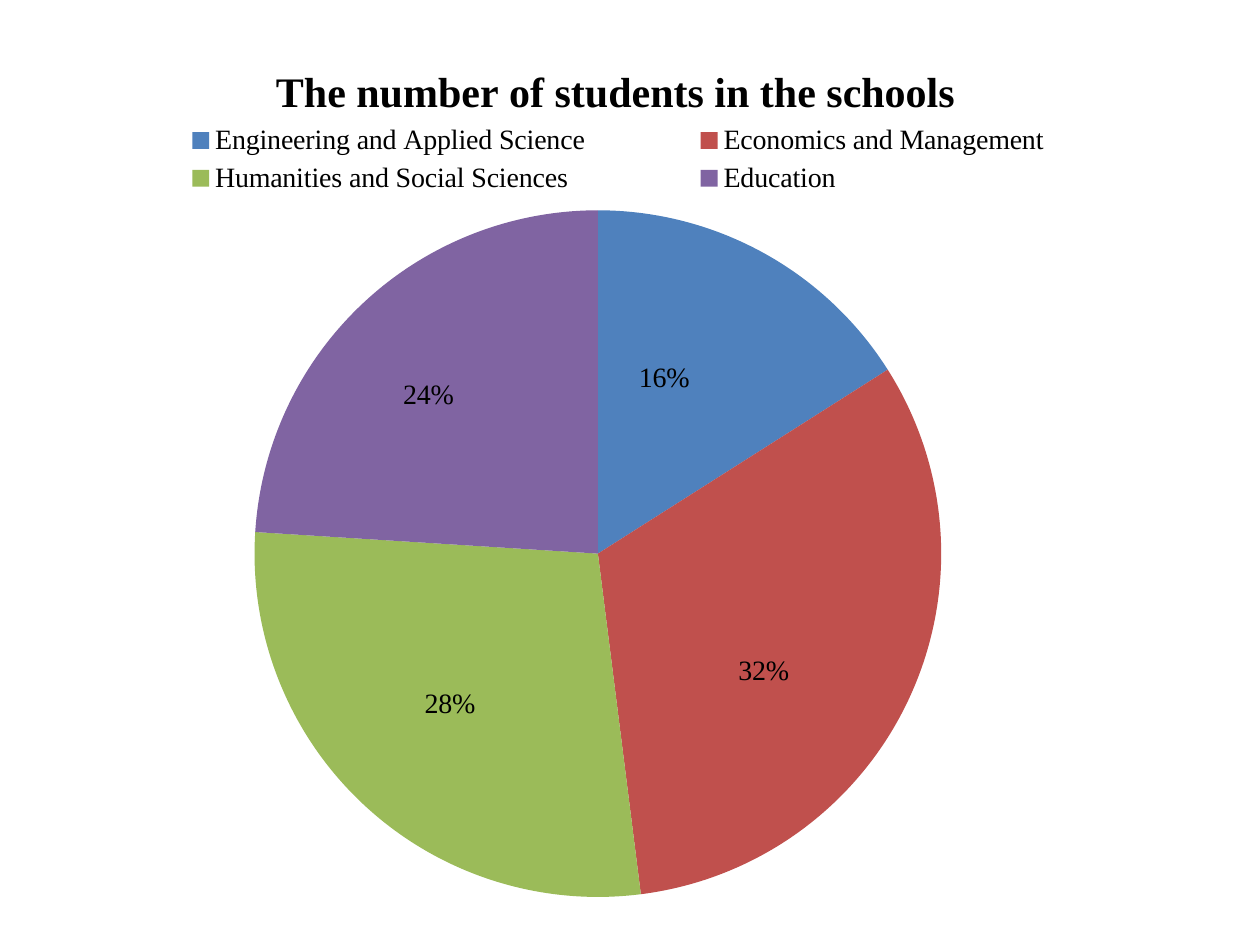
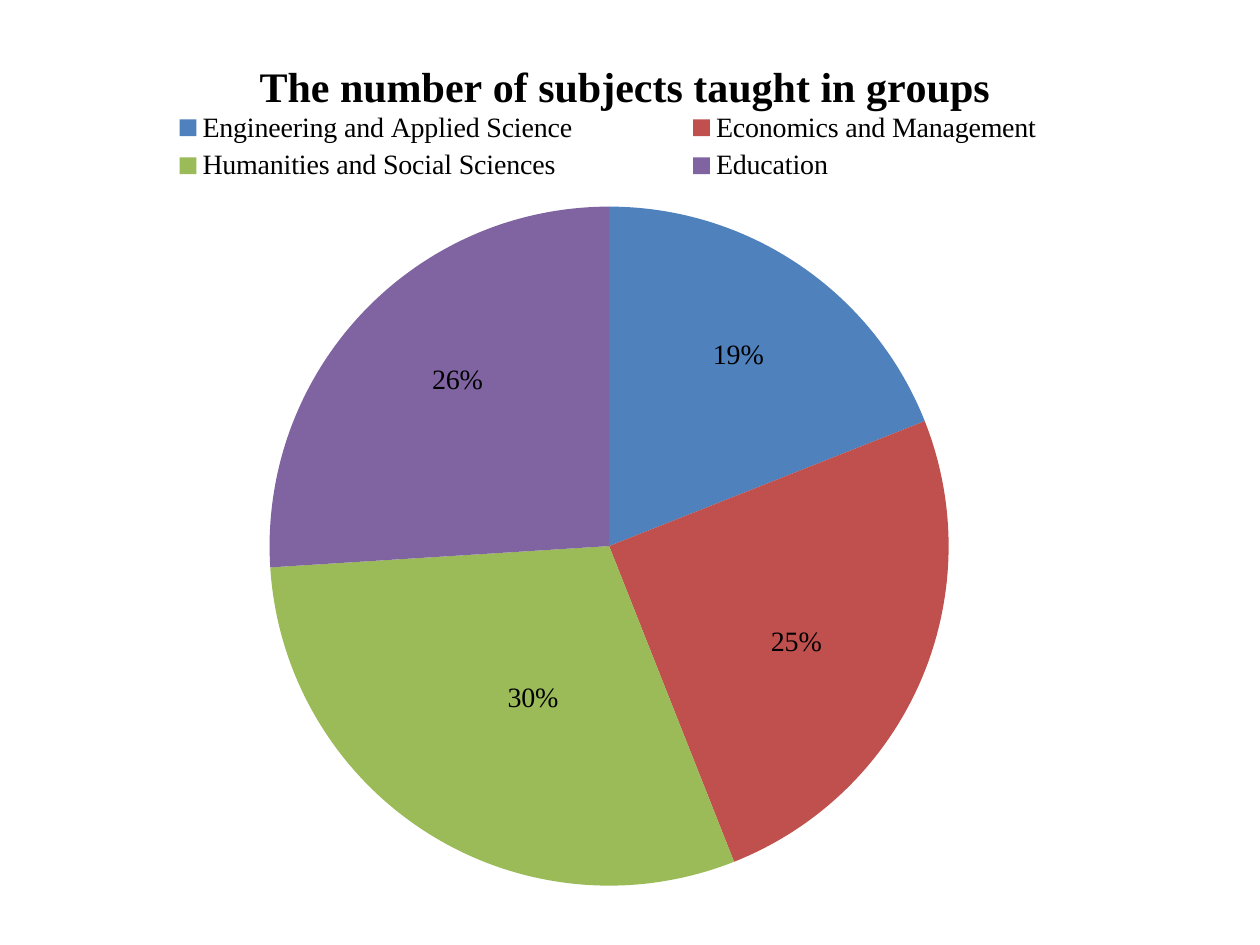
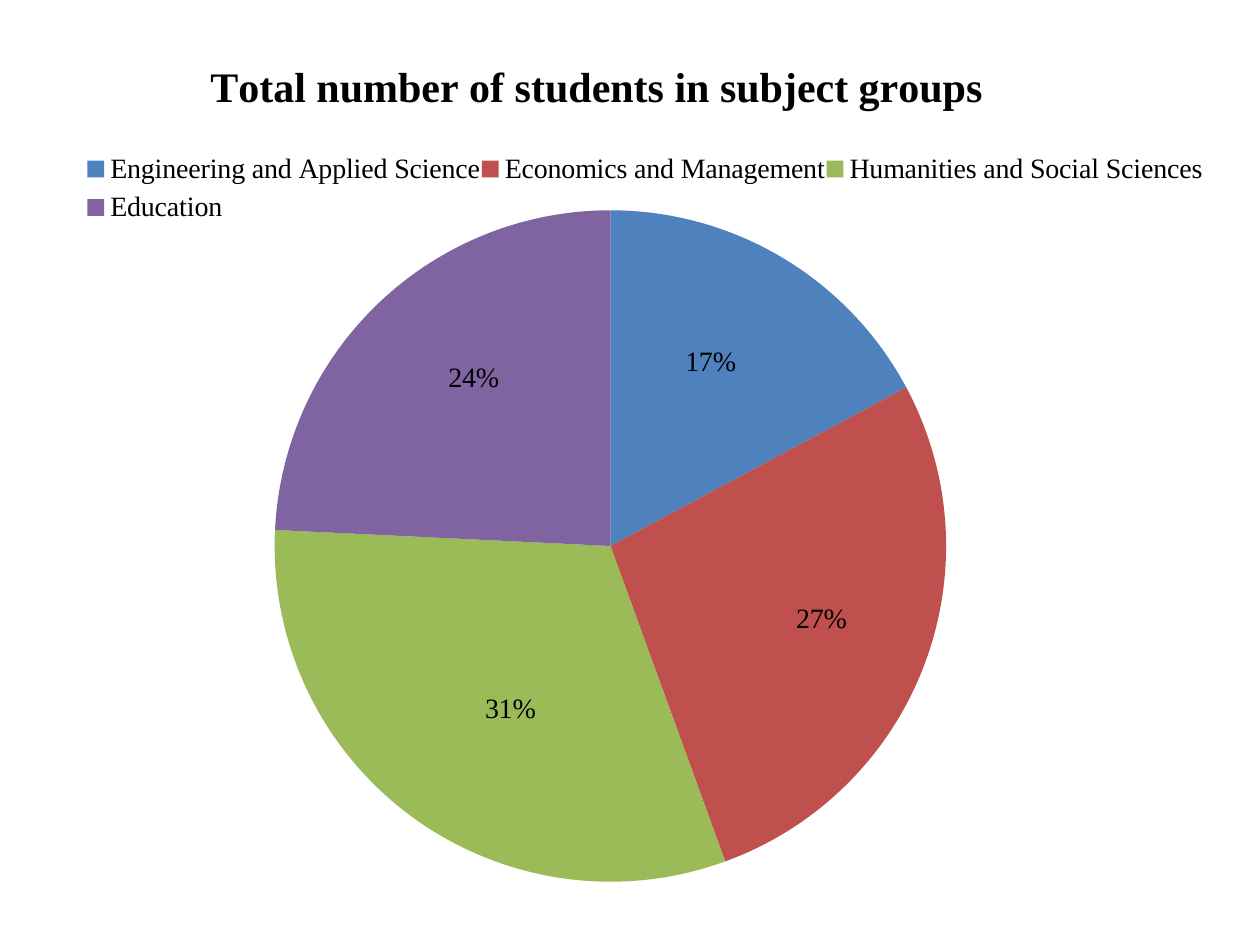
"""Build three slides with pie charts comparing the four schools."""
from math import cos, pi, sin

from pptx import Presentation
from pptx.chart.data import CategoryChartData
from pptx.dml.color import RGBColor
from pptx.enum.chart import XL_CHART_TYPE, XL_LABEL_POSITION, XL_LEGEND_POSITION
from pptx.oxml import parse_xml
from pptx.oxml.ns import nsdecls, qn
from pptx.util import Inches, Pt

BLACK = RGBColor(0x00, 0x00, 0x00)
BLUE = RGBColor(0x4F, 0x81, 0xBD)
RED = RGBColor(0xC0, 0x50, 0x4D)
GREEN = RGBColor(0x9B, 0xBB, 0x59)
PURPLE = RGBColor(0x80, 0x64, 0xA2)
SERIF = "Times New Roman"
BLANK_LAYOUT = 6

SCHOOLS = {
    "Engineering and Applied Science": BLUE,
    "Economics and Management": RED,
    "Humanities and Social Sciences": GREEN,
    "Education": PURPLE,
}

PIES = [
    {
        "title": "The number of students in the schools",
        "series": "Series 1",
        "shares": (16, 32, 28, 24),
        "frame": (0, 0.31, 9.77, 6.95),
        "title_at": (2.13, 0.45),
        "legend_at": (0.68, 0.94, 8.45, 0.65),
        "pie_at": (2.02, 1.67, 5.45, 5.45),
        "label_centres": ((5.27, 3.0), (6.06, 5.33), (3.57, 5.59), (3.4, 3.14)),
    },
    {
        "title": "The number of subjects taught in groups",
        "series": "The number of subjects taught in groups",
        "shares": (19, 25, 30, 26),
        "frame": (0.23, 0.23, 9.45, 7.03),
        "title_at": (2.0, 0.41),
        "legend_at": (0.54, 0.84, 8.57, 0.65),
        "pie_at": (2.14, 1.64, 5.39, 5.39),
        "label_centres": ((5.86, 2.82), (6.32, 5.1), (4.23, 5.54), (3.63, 3.02)),
    },
    {
        "title": "Total number of students in subject groups",
        "series": "Total number of students in subject groups",
        "shares": (17, 27, 31, 24),
        "frame": (0.23, 0.23, 9.53, 6.95),
        "title_at": (1.61, 0.41),
        "legend_at": (0.68, 1.16, 8.88, 0.67),
        "pie_at": (2.18, 1.67, 5.33, 5.33),
        "label_centres": ((5.64, 2.88), (6.52, 4.92), (4.05, 5.63), (3.76, 3.0)),
    },
]


def set_font(font, size):
    font.name = SERIF
    font.size = Pt(size)
    font.color.rgb = BLACK


def set_layout(parent, index, fields):
    for old in parent.findall(qn("c:layout")):
        parent.remove(old)
    values = "".join(f'<c:{name} val="{value}"/>' for name, value in fields.items())
    parent.insert(index, parse_xml(
        f'<c:layout {nsdecls("c")}><c:manualLayout>{values}</c:manualLayout></c:layout>'))


def place(parent, index, box, frame, **target):
    left, top, width, height = frame
    fields = {**target, "xMode": "edge", "yMode": "edge",
              "x": round((box[0] - left) / width, 4),
              "y": round((box[1] - top) / height, 4)}
    if len(box) == 4:
        fields.update(w=round(box[2] / width, 4), h=round(box[3] / height, 4))
    set_layout(parent, index, fields)


def slice_middles(shares, pie_at):
    left, top, diameter, _ = pie_at
    radius = diameter / 2
    passed = 0
    for share in shares:
        angle = 2 * pi * (passed + share / 2) / sum(shares)
        yield (left + radius + radius / 2 * sin(angle),
               top + radius - radius / 2 * cos(angle))
        passed += share


def add_labels(chart, pie):
    series = chart.plots[0].series[0]
    labels = series.data_labels
    labels.show_value = False
    labels.show_percentage = True
    labels.position = XL_LABEL_POSITION.CENTER
    set_font(labels.font, 16)

    for index, colour in enumerate(SCHOOLS.values()):
        point = series.points[index]
        point.format.fill.solid()
        point.format.fill.fore_color.rgb = colour
        point.format.line.fill.background()
        set_font(point.data_label.font, 16)
        point.data_label.position = XL_LABEL_POSITION.CENTER

    width, height = pie["frame"][2:]
    middles = slice_middles(pie["shares"], pie["pie_at"])
    for label, centre, middle in zip(
            chart.element.iter(qn("c:dLbl")), pie["label_centres"], middles):
        label.find(qn("c:showVal")).set("val", "0")
        label.find(qn("c:showPercent")).set("val", "1")
        set_layout(label, 1, {"x": round((centre[0] - middle[0]) / width, 4),
                              "y": round((centre[1] - middle[1]) / height, 4)})


def add_pie(slide, pie):
    data = CategoryChartData()
    data.categories = list(SCHOOLS)
    data.add_series(pie["series"], pie["shares"])
    frame = pie["frame"]
    chart = slide.shapes.add_chart(
        XL_CHART_TYPE.PIE, *(Inches(length) for length in frame), data).chart
    chart.font.name = "Calibri"
    chart.font.size = Pt(10)
    chart.font.color.rgb = BLACK
    chart.plots[0].vary_by_categories = True

    chart.has_title = True
    heading = chart.chart_title.text_frame
    heading.text = pie["title"]
    set_font(heading.paragraphs[0].font, 24)
    heading.paragraphs[0].font.bold = True

    chart.has_legend = True
    chart.legend.position = XL_LEGEND_POSITION.TOP
    chart.legend.include_in_layout = False
    set_font(chart.legend.font, 16)

    add_labels(chart, pie)
    body = chart.element.find(qn("c:chart"))
    place(body.find(qn("c:title")), 1, pie["title_at"], frame)
    place(body.find(qn("c:legend")), 1, pie["legend_at"], frame)
    place(body.find(qn("c:plotArea")), 0, pie["pie_at"], frame, layoutTarget="inner")


def main():
    deck = Presentation()
    deck.slide_width, deck.slide_height = Inches(10), Inches(7.5)
    for pie in PIES:
        add_pie(deck.slides.add_slide(deck.slide_layouts[BLANK_LAYOUT]), pie)
    deck.save("out.pptx")


if __name__ == "__main__":
    main()
